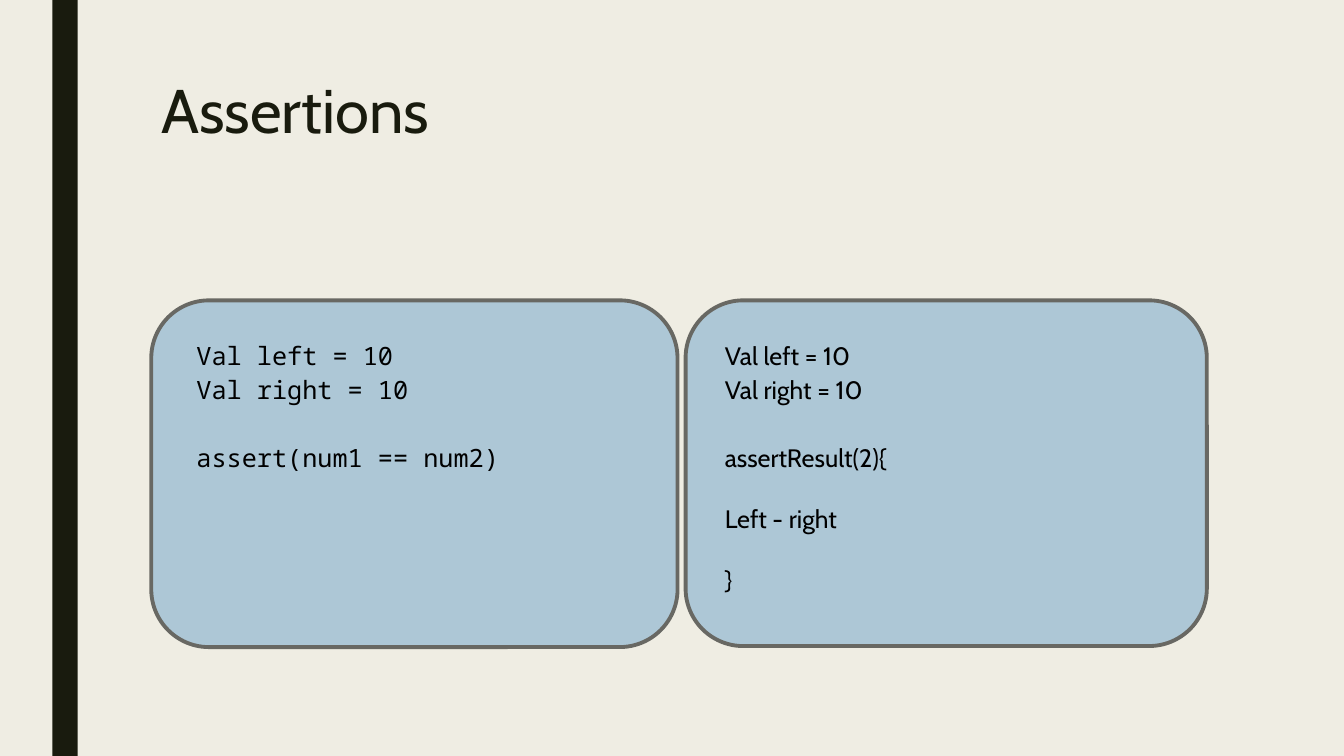
from dataclasses import dataclass

from pptx import Presentation
from pptx.dml.color import RGBColor
from pptx.enum.shapes import MSO_SHAPE as Shape
from pptx.enum.text import MSO_ANCHOR as Anchor
from pptx.util import Inches, Pt


@dataclass(frozen=True)
class Theme:
    """Colours, fonts and type sizes of the slide."""
    paper: str = "EFEDE3"
    ink: str = "191B0E"
    panel: str = "ADC7D6"
    border: str = "686863"
    code: str = "000000"
    sans: str = "Cabin"
    mono: str = "Noto Sans Mono"
    title_size: float = 44
    code_size: float = 18
    border_width: float = 2.75
    block_gap: float = 21.9


THEME = Theme()


def add_text(page, box, lines, font, size, color, line_spacing=1.0, gap=0):
    """Write one paragraph per line in a top-anchored text box."""
    frame = page.shapes.add_textbox(*map(Inches, box)).text_frame
    frame.word_wrap = True
    frame.vertical_anchor = Anchor.TOP
    for index, line in enumerate(lines):
        para = frame.paragraphs[0] if index == 0 else frame.add_paragraph()
        para.line_spacing = line_spacing
        para.space_before = Pt(gap if index else 0)
        span = para.add_run()
        span.text = line
        span.font.name = font
        span.font.size = Pt(size)
        span.font.color.rgb = RGBColor.from_string(color)


def add_block(page, kind, box, fill, border=None):
    """Draw a filled shape, with a border if a colour is given."""
    shape = page.shapes.add_shape(kind, *map(Inches, box))
    shape.shadow.inherit = False
    shape.fill.solid()
    shape.fill.fore_color.rgb = RGBColor.from_string(fill)
    if border:
        shape.line.color.rgb = RGBColor.from_string(border)
        shape.line.width = Pt(THEME.border_width)
    else:
        shape.line.fill.background()


def add_code_panel(page, box, indent, font, assertion):
    """Draw a rounded panel with two values and an assertion on them."""
    left, top, width, height = box
    add_block(page, Shape.ROUNDED_RECTANGLE, box, THEME.panel, THEME.border)
    statements = [(0.35, ["Val left = 10"]), (0.68, ["Val right = 10"]), (1.36, assertion)]
    for offset, lines in statements:
        text_box = (left + indent, top + offset, 4.64, 0.4 + 0.61 * (len(lines) - 1))
        add_text(page, text_box, lines, font, THEME.code_size, THEME.code,
                 gap=THEME.block_gap)


def build_assertions(page):
    """Lay out the side bar, the title and the two code panels."""
    page.background.fill.solid()
    page.background.fill.fore_color.rgb = RGBColor.from_string(THEME.paper)
    add_block(page, Shape.RECTANGLE, (0.52, 0, 0.25, 7.5), THEME.ink)
    add_text(page, (1.5, 0.75, 10.5, 1.62), ["Assertions"], THEME.sans,
             THEME.title_size, THEME.ink, line_spacing=0.89)
    add_code_panel(page, (1.5, 2.98, 5.22, 3.44), 0.35, THEME.mono,
                   ["assert(num1 == num2)"])
    add_code_panel(page, (6.8, 2.98, 5.17, 3.43), 0.29, THEME.sans,
                   ["assertResult(2){", "Left - right", "}"])


def main():
    """Build and save the deck."""
    deck = Presentation()
    deck.slide_width, deck.slide_height = Inches(13.33), Inches(7.5)
    build_assertions(deck.slides.add_slide(deck.slide_layouts[6]))
    deck.save("out.pptx")


if __name__ == "__main__":
    main()
